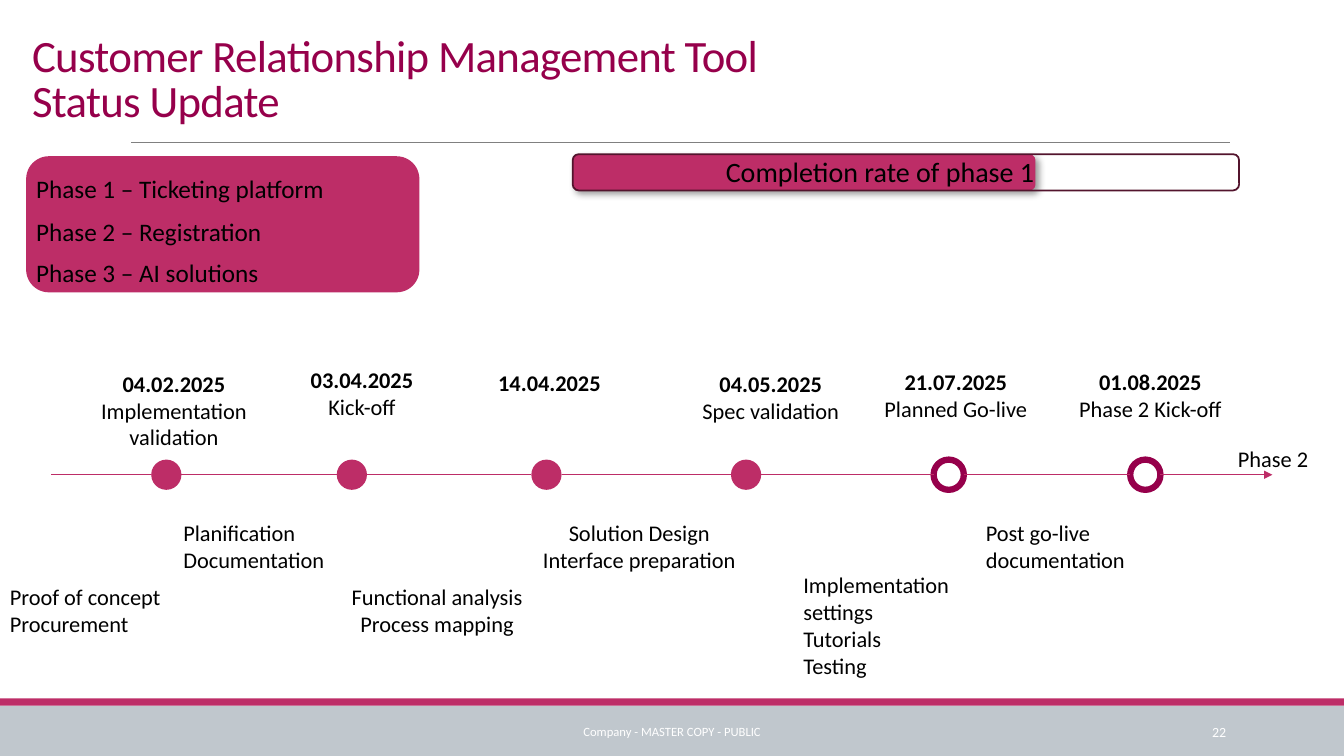
from lxml import etree
from pptx import Presentation
from pptx.dml.color import RGBColor
from pptx.enum.shapes import MSO_CONNECTOR, MSO_SHAPE
from pptx.enum.text import MSO_ANCHOR, PP_ALIGN
from pptx.oxml import parse_xml
from pptx.oxml.ns import nsdecls, qn
from pptx.util import Inches, Pt

PINK = RGBColor(0xBD, 0x2D, 0x67)
PLUM = RGBColor(0x96, 0x00, 0x4B)
DARK = RGBColor(0x53, 0x14, 0x2D)
GREY = RGBColor(0x80, 0x80, 0x80)
PALE = RGBColor(0xC0, 0xC7, 0xCD)
BLACK = RGBColor(0, 0, 0)
WHITE = RGBColor(0xFF, 0xFF, 0xFF)
LEFT, MID, RIGHT = PP_ALIGN.LEFT, PP_ALIGN.CENTER, PP_ALIGN.RIGHT
TOP, CENTRE, BOTTOM = MSO_ANCHOR.TOP, MSO_ANCHOR.MIDDLE, MSO_ANCHOR.BOTTOM
RECT, ROUND, OVAL = MSO_SHAPE.RECTANGLE, MSO_SHAPE.ROUNDED_RECTANGLE, MSO_SHAPE.OVAL
STRAIGHT = MSO_CONNECTOR.STRAIGHT

deck = Presentation()
deck.slide_width, deck.slide_height = Inches(13.33), Inches(7.5)
slide = deck.slides.add_slide(deck.slide_layouts[6])
shapes = slide.shapes


def add_text(text, box, size=16, color=BLACK, align=LEFT, anchor=TOP,
             head=False, space=None, track=None):
    """Each line of text is a paragraph; head makes the first one bold."""
    frame = shapes.add_textbox(*map(Inches, box)).text_frame
    frame.word_wrap = True
    frame.vertical_anchor = anchor
    for i, line in enumerate(text.split("\n")):
        para = frame.add_paragraph() if i else frame.paragraphs[0]
        para.alignment = align
        para.line_spacing = space
        para.text = line
        for run in para.runs:
            font = run.font
            font.name, font.size, font.bold = "Calibri", Pt(size), head and i == 0
            font.color.rgb = color
            if track:
                font._element.set("spc", str(track))


def add_shape(kind, box, fill=None, line=None, width=1):
    shape = shapes.add_shape(kind, *map(Inches, box))
    shape.shadow.inherit = False
    if fill is None:
        shape.fill.background()
    else:
        shape.fill.solid()
        shape.fill.fore_color.rgb = fill
    if line is None:
        shape.line.fill.background()
    else:
        shape.line.color.rgb = line
        shape.line.width = Pt(width)
    return shape


# Footer and title
add_shape(RECT, (0, 7, 13.33, 0.5), PALE)
add_shape(RECT, (0, 6.93, 13.33, 0.07), PINK)
add_text("Company - MASTER COPY - PUBLIC", (4.03, 7.06, 5.27, 0.4),
         size=9, color=WHITE, align=MID, anchor=CENTRE)
add_text("22", (10.83, 7.06, 1.43, 0.4),
         size=10, color=WHITE, align=RIGHT, anchor=CENTRE)
add_text("Customer Relationship Management Tool\vStatus Update",
         (0.22, 0.25, 9.53, 1.06), size=32, color=PLUM, anchor=BOTTOM,
         space=0.85, track=-50)

# Phases
add_shape(ROUND, (0.26, 1.55, 3.9, 1.35), PINK)
phases = [("Phase 1 – Ticketing platform", 1.67),
          ("Phase 2 – Registration", 2.1),
          ("Phase 3 – AI solutions", 2.5)]
for name, top in phases:
    add_text(name, (0.26, top, 3.81, 0.4), size=18)

# Completion bar
done = add_shape(ROUND, (5.68, 1.53, 4.59, 0.36), PINK)
glow = done._element.spPr.find(qn("a:effectLst"))
glow.append(parse_xml(
    f'<a:outerShdw {nsdecls("a")} blurRad="63500" dist="38100" dir="2700000">'
    '<a:srgbClr val="000000"><a:alpha val="40000"/></a:srgbClr></a:outerShdw>'))
add_shape(ROUND, (5.68, 1.53, 6.61, 0.36), line=DARK, width=1.25)
add_text("Completion rate of phase 1", (7.1, 1.48, 3.35, 0.44), size=20)

# Timeline: filled dots are reached, rings are planned
AXIS, RAD = 4.71, 0.15
dots = [1.65, 3.49, 5.42, 7.4, 9.41, 11.36]
for i, mid in enumerate(dots):
    box = (mid - RAD, AXIS - RAD, 2 * RAD, 2 * RAD)
    if i < 4:
        add_shape(OVAL, box, PINK)
    else:
        add_shape(OVAL, box, line=PLUM, width=4.5)

starts = [0.51] + [mid + RAD for mid in dots]
ends = [mid - RAD for mid in dots] + [12.62]
lines = [(1.3, 12.2, 1.41, GREY, 0.5)]
lines += [(start, end, AXIS, PINK, 1) for start, end in zip(starts, ends)]
for start, end, top, color, width in lines:
    link = shapes.add_connector(STRAIGHT, Inches(start), Inches(top),
                                Inches(end), Inches(top))
    link.line.color.rgb = color
    link.line.width = Pt(width)
    etree.SubElement(link._element.spPr, qn("a:effectLst"))
# The last link ends in an arrow
etree.SubElement(link.line._get_or_add_ln(), qn("a:tailEnd"), type="triangle")

# Milestones above the line
stones = [("04.02.2025\nImplementation validation", (0.55, 3.62, 2.35, 0.91)),
          ("03.04.2025\nKick-off", (2.95, 3.58, 1.28, 0.64)),
          ("14.04.2025", (4.82, 3.61, 1.26, 0.37)),
          ("04.05.2025\nSpec validation", (6.83, 3.62, 1.63, 0.64)),
          ("21.07.2025\nPlanned Go-live", (8.67, 3.6, 1.62, 0.64)),
          ("01.08.2025\nPhase 2 Kick-off", (10.56, 3.6, 1.7, 0.64))]
for text, box in stones:
    add_text(text, box, align=MID, head=True)

# Tasks below the line, and the label at its end
tasks = [("Proof of concept\nProcurement", (0, 5.74, 1.87, 0.64), LEFT),
         ("Planification\nDocumentation", (1.72, 5.1, 1.6, 0.64), LEFT),
         ("Functional analysis\nProcess mapping", (3.33, 5.74, 2.01, 0.64), MID),
         ("Solution Design\nInterface preparation", (5.27, 5.1, 2.14, 0.64), MID),
         ("Implementation settings\nTutorials\nTesting",
          (7.87, 5.62, 1.67, 1.18), LEFT),
         ("Post go-live documentation", (9.68, 5.1, 1.68, 0.64), LEFT),
         ("Phase 2", (12.18, 4.37, 1.15, 0.37), LEFT)]
for text, box, align in tasks:
    add_text(text, box, align=align)

deck.save("out.pptx")
